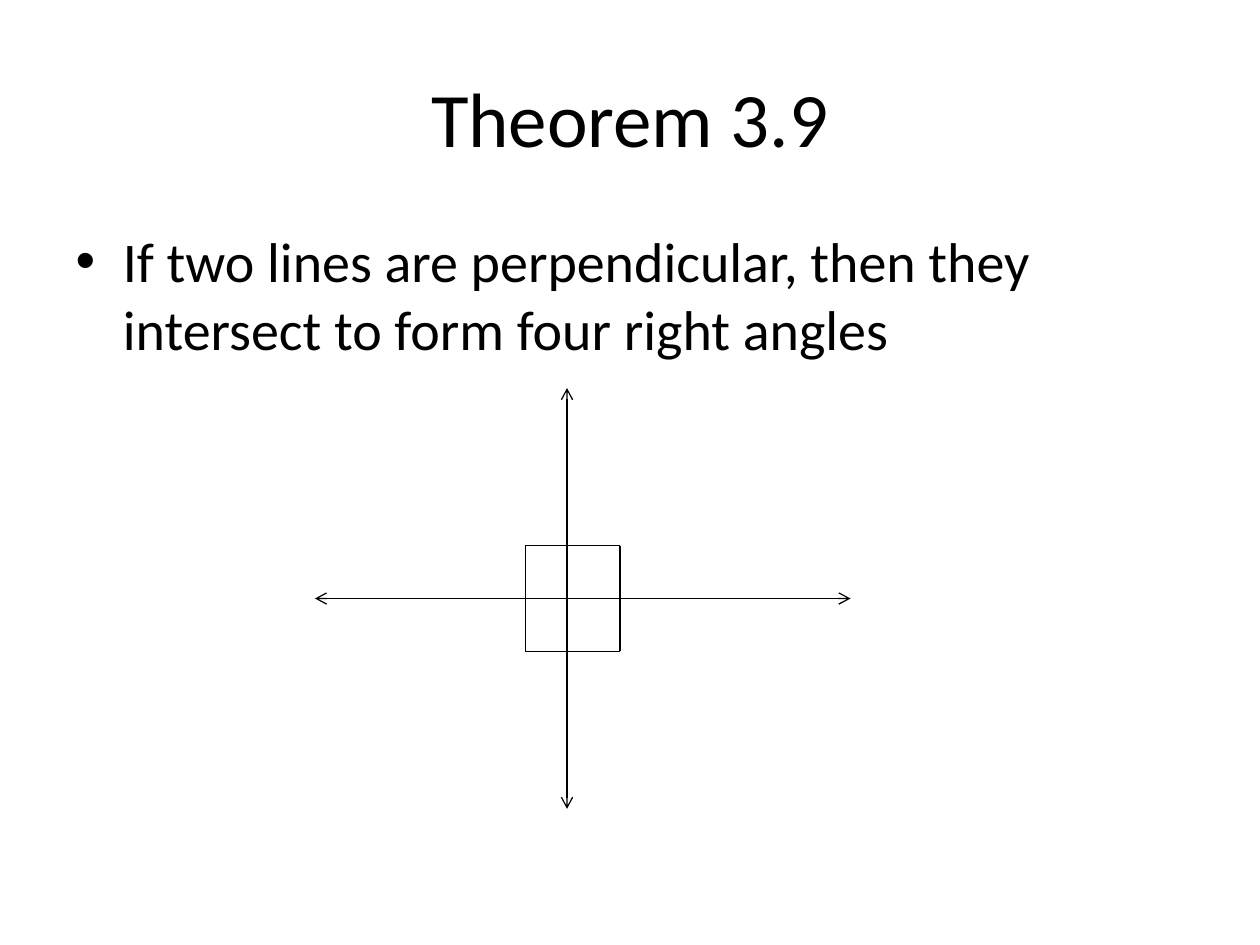
from typing import NamedTuple

from lxml import etree
from pptx import Presentation
from pptx.dml.color import RGBColor
from pptx.enum import shapes, text
from pptx.oxml.ns import qn
from pptx.util import Inches, Pt

BLACK = RGBColor(0x00, 0x00, 0x00)
FONT = "Calibri"


class Line(NamedTuple):
    x1: float
    y1: float
    x2: float
    y2: float
    arrows: bool = False


LEFT, TOP, RIGHT, BOTTOM = 4.17, 4.33, 4.92, 5.17
PERPENDICULAR_LINES = [
    Line(4.5, 3.08, 4.5, 6.42, arrows=True),
    Line(2.5, 4.75, 6.75, 4.75, arrows=True),
]
RIGHT_ANGLE_MARKS = [
    Line(LEFT, TOP, RIGHT, TOP),
    Line(RIGHT, TOP, RIGHT, BOTTOM),
    Line(LEFT, TOP, LEFT, BOTTOM),
    Line(LEFT, BOTTOM, RIGHT, BOTTOM),
]


def fill_placeholder(shape, top: float, height: float, wording: str, size: int):
    """Place a full-width placeholder, set its text and return the paragraph."""
    shape.left, shape.top = Inches(0.5), Inches(top)
    shape.width, shape.height = Inches(9), Inches(height)
    shape.text_frame.text = wording
    paragraph = shape.text_frame.paragraphs[0]
    paragraph.font.name = FONT
    paragraph.font.size = Pt(size)
    paragraph.font.color.rgb = BLACK
    return paragraph


def draw_line(slide, line: Line) -> None:
    connector = slide.shapes.add_connector(
        shapes.MSO_CONNECTOR.STRAIGHT,
        Inches(line.x1), Inches(line.y1), Inches(line.x2), Inches(line.y2),
    )
    connector.line.color.rgb = BLACK
    connector.line.width = Pt(0.75)
    if line.arrows:
        outline = connector.line._get_or_add_ln()
        for end in ("a:headEnd", "a:tailEnd"):
            etree.SubElement(outline, qn(end), type="arrow")
    etree.SubElement(connector._element.spPr, qn("a:effectLst"))


def main() -> None:
    presentation = Presentation()
    presentation.slide_width = Inches(10)
    presentation.slide_height = Inches(7.5)
    slide = presentation.slides.add_slide(presentation.slide_layouts[1])

    title = slide.shapes.title
    heading = fill_placeholder(title, 0.3, 1.25, "Theorem 3.9", 44)
    heading.alignment = text.PP_ALIGN.CENTER
    title.text_frame.vertical_anchor = text.MSO_ANCHOR.MIDDLE

    fill_placeholder(
        slide.placeholders[1], 1.75, 4.95,
        "If two lines are perpendicular, then they intersect to form four right angles",
        32,
    )

    for line in PERPENDICULAR_LINES + RIGHT_ANGLE_MARKS:
        draw_line(slide, line)

    presentation.save("out.pptx")


if __name__ == "__main__":
    main()
